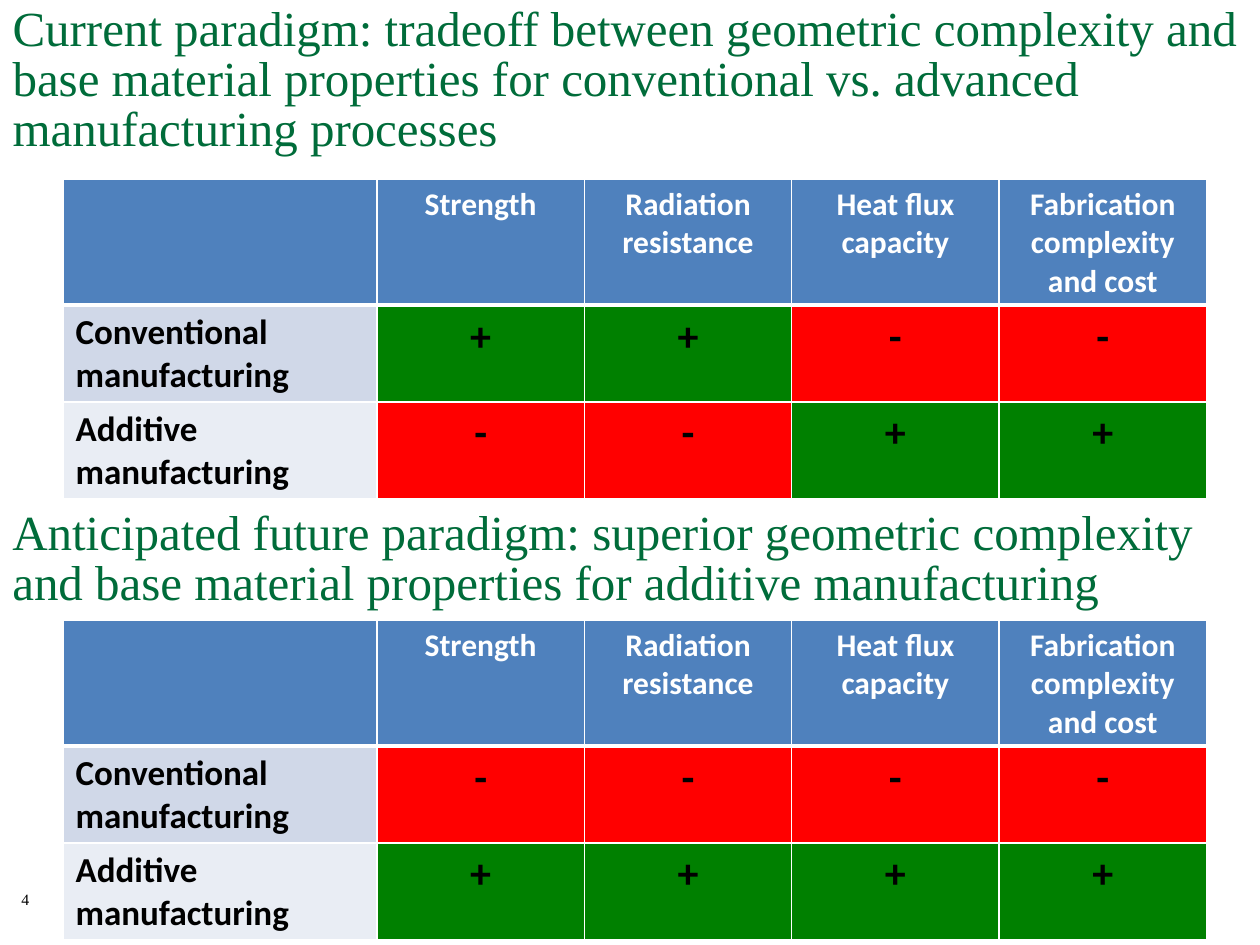
"""Build a slide comparing two manufacturing paradigms in plus/minus tables."""
from dataclasses import dataclass
from typing import Optional

from lxml import etree
from pptx import Presentation
from pptx.dml.color import RGBColor
from pptx.enum import text
from pptx.oxml import ns
from pptx.util import Cm, Pt


@dataclass(frozen=True)
class Theme:
    serif: str = "Times New Roman"
    sans: str = "Calibri"
    heading: str = "006C3A"
    ink: str = "000000"
    white: str = "FFFFFF"
    header: str = "4F81BD"
    bands: tuple = ("D0D8E8", "E9EDF4")
    good: str = "008000"
    bad: str = "FF0000"
    heading_size: int = 28
    header_size: int = 18
    process_size: int = 20
    rating_size: int = 24
    number_size: int = 9
    thin: int = 1
    thick: int = 3


@dataclass(frozen=True)
class Paradigm:
    heading: str
    heading_top: float
    heading_height: float
    table_top: float
    ratings: tuple


THEME = Theme()
CRITERIA = ("Strength", "Radiation resistance", "Heat flux capacity",
            "Fabrication complexity and cost")
PROCESSES = ("Conventional manufacturing", "Additive manufacturing")
PARADIGMS = (
    Paradigm("Current paradigm: tradeoff between geometric complexity and base material "
             "properties for conventional vs. advanced manufacturing processes",
             0, 3.33, 3.61, ("++--", "--++")),
    Paradigm("Anticipated future paradigm: superior geometric complexity and base material "
             "properties for additive manufacturing",
             10.16, 2.31, 12.5, ("----", "++++")),
)
SLIDE_WIDTH, SLIDE_HEIGHT = 25.4, 19.05
TABLE_LEFT, TABLE_HEIGHT = 1.27, 6.42
PROCESS_WIDTH, CRITERION_WIDTH, ROW_HEIGHT = 6.33, 4.18, 1.04


def write(frame, words: str, *, size: int, color: str, face: str = THEME.sans,
          bold: bool = False, align=text.PP_ALIGN.LEFT,
          spacing: Optional[float] = None) -> None:
    """Put one formatted paragraph into a text frame."""
    paragraph = frame.paragraphs[0]
    paragraph.alignment = align
    if spacing:
        paragraph.line_spacing = spacing
    run = paragraph.add_run()
    run.text = words
    run.font.name, run.font.size, run.font.bold = face, Pt(size), bold
    run.font.color.rgb = RGBColor.from_string(color)


def place(shape, left: float, top: float, width: float, height: float) -> None:
    """Set the position and size of a shape in centimetres."""
    shape.left, shape.top = Cm(left), Cm(top)
    shape.width, shape.height = Cm(width), Cm(height)


def draw_heading(shape, paradigm: Paradigm) -> None:
    """Format a title or text box as the heading of a paradigm."""
    place(shape, 0, paradigm.heading_top, SLIDE_WIDTH, paradigm.heading_height)
    frame = shape.text_frame
    frame.word_wrap = True
    frame.auto_size = text.MSO_AUTO_SIZE.SHAPE_TO_FIT_TEXT
    frame.vertical_anchor = text.MSO_ANCHOR.TOP
    write(frame, paradigm.heading, size=THEME.heading_size, color=THEME.heading,
          face=THEME.serif, spacing=0.85)


def style_cell(cell, fill: str, top: int, bottom: int) -> None:
    """Fill a cell and give it white borders."""
    cell.fill.solid()
    cell.fill.fore_color.rgb = RGBColor.from_string(fill)
    properties = cell._tc.get_or_add_tcPr()
    borders = {"lnL": THEME.thin, "lnR": THEME.thin, "lnT": top, "lnB": bottom}
    for index, (side, width) in enumerate(borders.items()):
        line = etree.Element(ns.qn(f"a:{side}"), w=str(Pt(width)))
        solid = etree.SubElement(line, ns.qn("a:solidFill"))
        etree.SubElement(solid, ns.qn("a:srgbClr"), val=THEME.white)
        properties.insert(index, line)


def draw_table(slide, paradigm: Paradigm) -> None:
    """Draw the rating table of a paradigm."""
    width = PROCESS_WIDTH + len(CRITERIA) * CRITERION_WIDTH
    graphic = slide.shapes.add_table(
        len(PROCESSES) + 1, len(CRITERIA) + 1, Cm(TABLE_LEFT), Cm(paradigm.table_top),
        Cm(width), Cm(TABLE_HEIGHT))
    table = graphic.table
    for index, column in enumerate(table.columns):
        column.width = Cm(CRITERION_WIDTH if index else PROCESS_WIDTH)
    for row in table.rows:
        row.height = Cm(ROW_HEIGHT)
    graphic.height = Cm(TABLE_HEIGHT)

    for column, criterion in enumerate(("", *CRITERIA)):
        cell = table.cell(0, column)
        style_cell(cell, THEME.header, THEME.thin, THEME.thick)
        if criterion:
            write(cell.text_frame, criterion, size=THEME.header_size, color=THEME.white,
                  bold=True, align=text.PP_ALIGN.CENTER)

    rows = zip(PROCESSES, THEME.bands, paradigm.ratings)
    for row, (process, band, ratings) in enumerate(rows, start=1):
        top = THEME.thick if row == 1 else THEME.thin
        label = table.cell(row, 0)
        style_cell(label, band, top, THEME.thin)
        write(label.text_frame, process, size=THEME.process_size, color=THEME.ink, bold=True)
        for column, rating in enumerate(ratings, start=1):
            cell = table.cell(row, column)
            style_cell(cell, THEME.good if rating == "+" else THEME.bad, top, THEME.thin)
            write(cell.text_frame, rating, size=THEME.rating_size, color=THEME.ink,
                  bold=True, align=text.PP_ALIGN.CENTER)


def draw_page_number(slide, number: str) -> None:
    """Write the page number at the lower left."""
    box = slide.shapes.add_textbox(Cm(0.43), Cm(17.98), Cm(7.82), Cm(0.84))
    frame = box.text_frame
    frame.word_wrap = True
    frame.margin_left = frame.margin_right = frame.margin_top = frame.margin_bottom = 0
    write(frame, number, size=THEME.number_size, color=THEME.ink, face=THEME.serif,
          spacing=0.9)


def main() -> None:
    """Build and save the slide."""
    deck = Presentation()
    deck.slide_width, deck.slide_height = Cm(SLIDE_WIDTH), Cm(SLIDE_HEIGHT)
    slide = deck.slides.add_slide(deck.slide_layouts[5])
    draw_page_number(slide, "4")
    current, future = PARADIGMS
    draw_heading(slide.shapes.title, current)
    draw_table(slide, current)
    draw_heading(slide.shapes.add_textbox(0, 0, 0, 0), future)
    draw_table(slide, future)
    deck.save("out.pptx")


if __name__ == "__main__":
    main()
